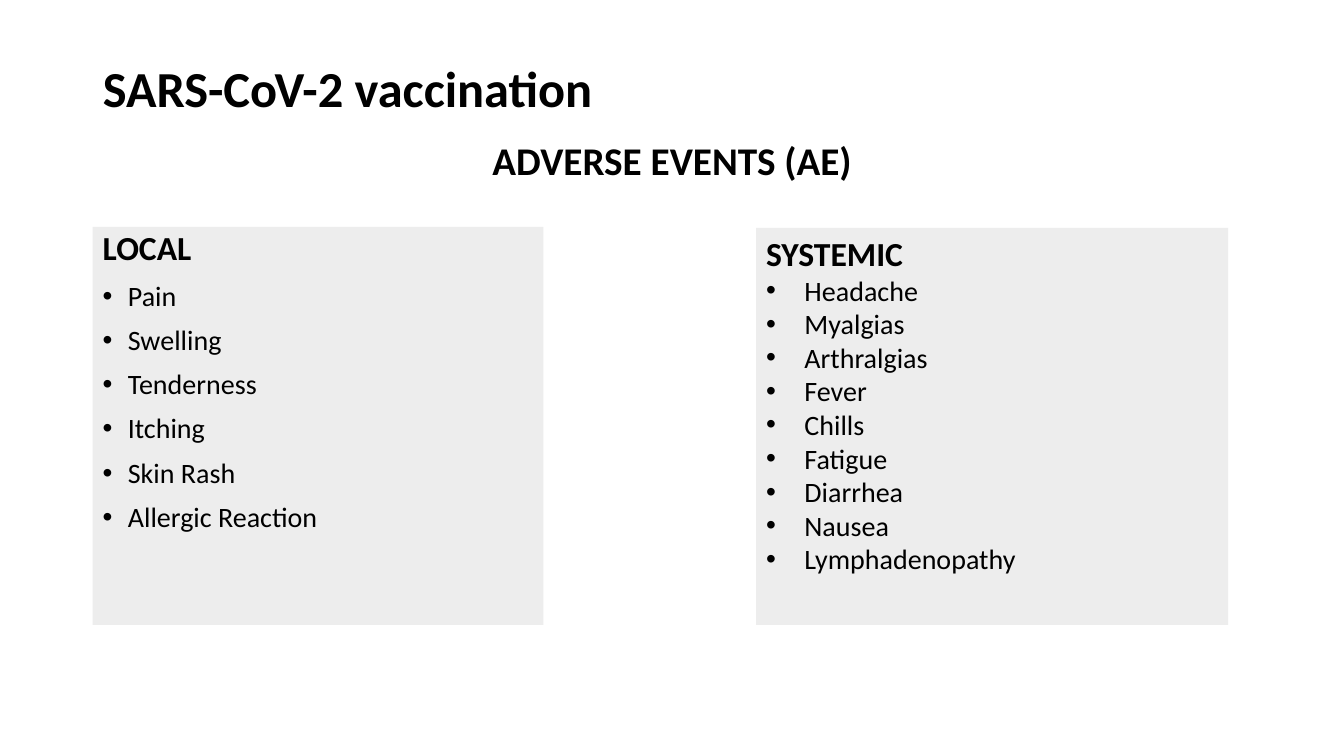
"""Build a slide listing local and systemic adverse events of vaccination."""
from lxml import etree
from pptx import Presentation
from pptx.dml.color import RGBColor
from pptx.enum.text import MSO_ANCHOR, PP_ALIGN
from pptx.oxml.ns import qn
from pptx.util import Inches, Pt

BLACK = RGBColor(0x00, 0x00, 0x00)
PANEL_GRAY = RGBColor(0xED, 0xED, 0xED)
LEFT, CENTER = PP_ALIGN.LEFT, PP_ALIGN.CENTER
TOP, MIDDLE = MSO_ANCHOR.TOP, MSO_ANCHOR.MIDDLE
TITLE_ONLY = 5


def write(para, text, size, bold=False, align=LEFT, spacing=1.0, before=0, indent=0):
    """Fill a paragraph, with a hanging bullet when an indent is given."""
    para.alignment = align
    para.line_spacing = spacing
    para.space_before = Pt(before)
    if indent:
        properties = para._p.get_or_add_pPr()
        properties.set("marL", str(Inches(indent)))
        properties.set("indent", str(-Inches(indent)))
        etree.SubElement(properties, qn("a:buFont")).set("typeface", "Arial")
        etree.SubElement(properties, qn("a:buChar")).set("char", "•")
    span = para.add_run()
    span.text = text
    span.font.name = "Calibri"
    span.font.size = Pt(size)
    span.font.bold = bold
    span.font.color.rgb = BLACK


def prepare(box, anchor=TOP):
    """Set wrapping and anchoring, and return the text frame."""
    frame = box.text_frame
    frame.word_wrap = True
    frame.vertical_anchor = anchor
    return frame


deck = Presentation()
deck.slide_width, deck.slide_height = Inches(13.33), Inches(7.5)
page = deck.slides.add_slide(deck.slide_layouts[TITLE_ONLY])

title = page.shapes.title
title.left, title.top = Inches(0.92), Inches(0.4)
title.width, title.height = Inches(11.62), Inches(1)
write(prepare(title, MIDDLE).paragraphs[0], "SARS-CoV-2 vaccination", 36, bold=True, spacing=0.9)

subtitle = page.shapes.add_textbox(Inches(3.89), Inches(1.3), Inches(5.55), Inches(0.57))
write(prepare(subtitle).paragraphs[0], "ADVERSE EVENTS (AE)", 28, bold=True, align=CENTER)

local_events = ["Pain", "Swelling", "Tenderness", "Itching", "Skin Rash", "Allergic Reaction"]
systemic_events = ["Headache", "Myalgias", "Arthralgias", "Fever", "Chills", "Fatigue",
                   "Diarrhea", "Nausea", "Lymphadenopathy"]
panels = [
    ("LOCAL", local_events, (0.92, 2.25, 4.47, 3.95), 0.9, 10, 0.25),
    ("SYSTEMIC", systemic_events, (7.5, 2.26, 4.68, 3.94), 1.0, 0, 0.38),
]
for heading, events, place, spacing, before, indent in panels:
    panel = page.shapes.add_textbox(*map(Inches, place))
    panel.fill.solid()
    panel.fill.fore_color.rgb = PANEL_GRAY
    frame = prepare(panel)
    write(frame.paragraphs[0], heading, 24, bold=True, spacing=spacing)
    for event in events:
        write(frame.add_paragraph(), event, 20, spacing=spacing, before=before, indent=indent)

deck.save("out.pptx")
